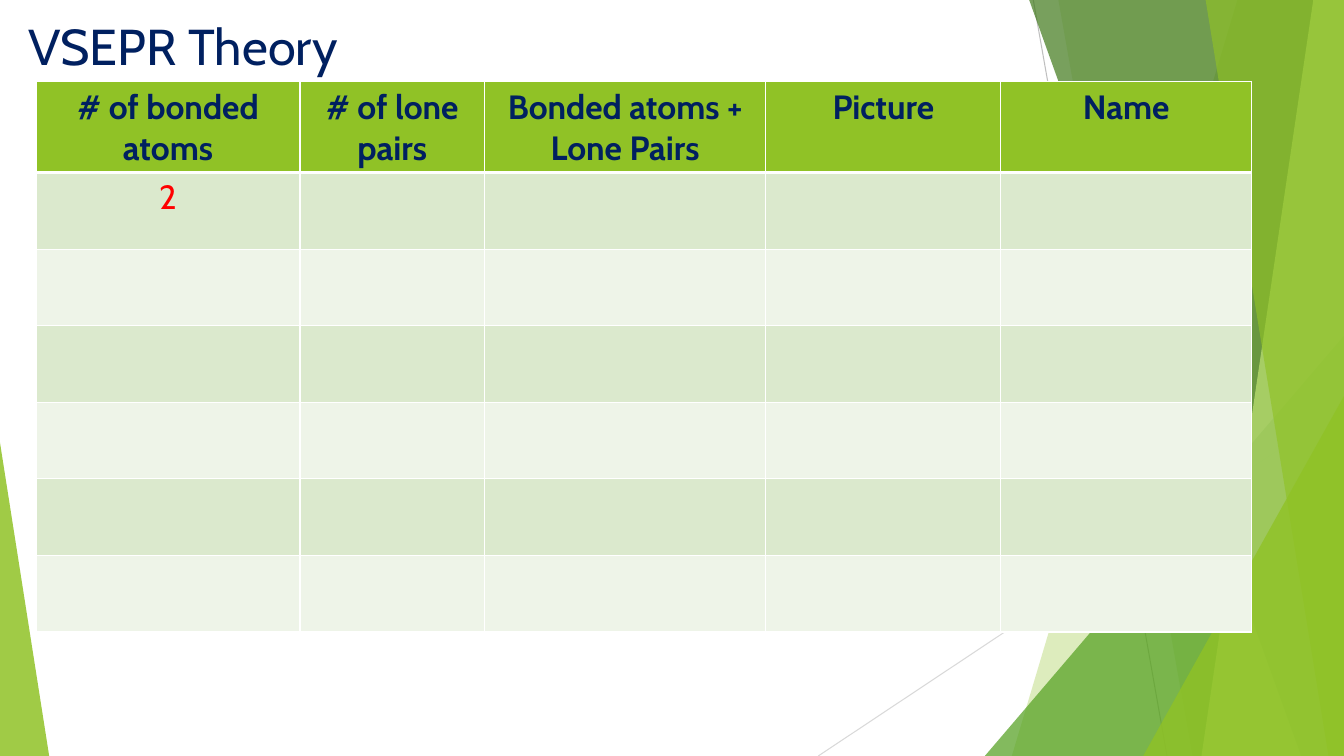
from lxml import etree
from pptx import Presentation
from pptx.dml.color import RGBColor
from pptx.enum.shapes import MSO_CONNECTOR, MSO_SHAPE
from pptx.enum.text import MSO_ANCHOR, PP_ALIGN
from pptx.oxml.ns import qn
from pptx.util import Cm, Pt

STRAIGHT = MSO_CONNECTOR.STRAIGHT
TRIANGLE = MSO_SHAPE.ISOSCELES_TRIANGLE
TOP = MSO_ANCHOR.TOP
CENTER = PP_ALIGN.CENTER

NAVY = RGBColor(0x00, 0x20, 0x60)
RED = RGBColor(0xFF, 0x00, 0x00)
GREEN = RGBColor(0x90, 0xC2, 0x26)
MID_GREEN = RGBColor(0x54, 0xA0, 0x21)
DARK_GREEN = RGBColor(0x3F, 0x78, 0x19)
LIME = RGBColor(0xC0, 0xE4, 0x74)
ROW_DARK = RGBColor(0xDB, 0xE9, 0xCD)
ROW_LIGHT = RGBColor(0xEE, 0xF4, 0xE8)
GREY = RGBColor(0xBF, 0xBF, 0xBF)
LIGHT_GREY = RGBColor(0xD9, 0xD9, 0xD9)

WIDTH, HEIGHT = 33.87, 19.05
BAND_TOP = -0.02

TITLE = "VSEPR Theory"
HEADINGS = ["# of bonded atoms", "# of lone pairs", "Bonded atoms + Lone Pairs", "Picture", "Name"]
FIRST_ENTRY = "2"
BODY_ROWS = 6
COLUMN_WIDTHS = [6.65, 4.65, 7.09, 5.92, 6.32]
ROW_HEIGHT = 1.93
TABLE_LEFT, TABLE_TOP = 0.91, 2.06

TITLE_FORMAT = {"name": "Cabin", "size": Pt(36)}
HEADING_FORMAT = {"name": "Cabin", "size": Pt(24), "bold": True}
ENTRY_FORMAT = {"name": "Cabin", "size": Pt(24), "bold": False}

RAYS = [
    (26.04, 0, 29.41, HEIGHT, GREY),
    (WIDTH, 10.24, 20.62, HEIGHT, LIGHT_GREY),
]
FACETS = [
    ("band", (31.19, 25.5), GREEN, 30),
    ("band", (26.67, 30.05), GREEN, 20),
    ("triangle", (24.82, 8.46, 9.05, 1), MID_GREEN, 72),
    ("band", (25.93, 32.79), DARK_GREEN, 70),
    ("band", (33.1, 30.28), LIME, 70),
    ("band", (30.38, 33.48), GREEN, 65),
    ("triangle", (28.81, 9.98, 5.06, 1), GREEN, 80),
    ("triangle", (0, 11.15, 1.24, 0), GREEN, 85),
]


def write(frame, text, color, font_format):
    run = frame.paragraphs[0].add_run()
    run.text = text
    run.font.color.rgb = color
    for key, value in font_format.items():
        setattr(run.font, key, value)


def add_ray(shapes, x1, y1, x2, y2, color):
    ray = shapes.add_connector(STRAIGHT, Cm(x1), Cm(y1), Cm(x2), Cm(y2))
    ray.line.color.rgb = color
    ray.line.width = Pt(0.75)
    etree.SubElement(ray._element.spPr, qn("a:effectLst"))


def add_band(shapes, top_x, bottom_x):
    builder = shapes.build_freeform(Cm(top_x), Cm(BAND_TOP))
    corners = [(WIDTH, BAND_TOP), (WIDTH, HEIGHT), (bottom_x, HEIGHT)]
    builder.add_line_segments([(Cm(x), Cm(y)) for x, y in corners], close=True)
    return builder.convert_to_shape()


def add_triangle(shapes, left, top, width, apex):
    triangle = shapes.add_shape(TRIANGLE, Cm(left), Cm(top), Cm(width), Cm(HEIGHT - top))
    triangle.adjustments[0] = apex
    return triangle


def paint(facet, color, opacity):
    facet.shadow.inherit = False
    facet.line.fill.background()
    facet.fill.solid()
    facet.fill.fore_color.rgb = color
    tint = facet._element.spPr.find(qn("a:solidFill"))[0]
    etree.SubElement(tint, qn("a:alpha"), val=str(opacity * 1000))


def style_cell(cell, color, top_width, bottom_width):
    cell.fill.solid()
    cell.fill.fore_color.rgb = color
    properties = cell._tc.get_or_add_tcPr()
    widths = {"lnL": 1, "lnR": 1, "lnT": top_width, "lnB": bottom_width}
    for position, (side, width) in enumerate(widths.items()):
        border = etree.Element(qn("a:" + side), w=str(Pt(width)))
        fill = etree.SubElement(border, qn("a:solidFill"))
        etree.SubElement(fill, qn("a:srgbClr"), val="FFFFFF")
        properties.insert(position, border)


def add_geometry_table(shapes):
    row_count = BODY_ROWS + 1
    table = shapes.add_table(
        row_count, len(HEADINGS), Cm(TABLE_LEFT), Cm(TABLE_TOP),
        Cm(sum(COLUMN_WIDTHS)), Cm(ROW_HEIGHT * row_count),
    ).table
    for column, width in zip(table.columns, COLUMN_WIDTHS):
        column.width = Cm(width)
    for index, row in enumerate(table.rows):
        row.height = Cm(ROW_HEIGHT)
        color = GREEN if index == 0 else ROW_DARK if index % 2 else ROW_LIGHT
        for cell in row.cells:
            style_cell(cell, color, 3 if index == 1 else 1, 3 if index == 0 else 1)
            cell.text_frame.paragraphs[0].alignment = CENTER
    for cell, heading in zip(table.rows[0].cells, HEADINGS):
        write(cell.text_frame, heading, NAVY, HEADING_FORMAT)
    write(table.cell(1, 0).text_frame, FIRST_ENTRY, RED, ENTRY_FORMAT)


def main():
    deck = Presentation()
    deck.slide_width, deck.slide_height = Cm(WIDTH), Cm(HEIGHT)
    shapes = deck.slides.add_slide(deck.slide_layouts[6]).shapes

    for ray in RAYS:
        add_ray(shapes, *ray)
    makers = {"band": add_band, "triangle": add_triangle}
    for kind, geometry, color, opacity in FACETS:
        paint(makers[kind](shapes, *geometry), color, opacity)

    title = shapes.add_textbox(Cm(0.46), Cm(0.25), Cm(23.88), Cm(3.66)).text_frame
    title.word_wrap = True
    title.vertical_anchor = TOP
    write(title, TITLE, NAVY, TITLE_FORMAT)

    add_geometry_table(shapes)
    deck.save("out.pptx")


if __name__ == "__main__":
    main()
